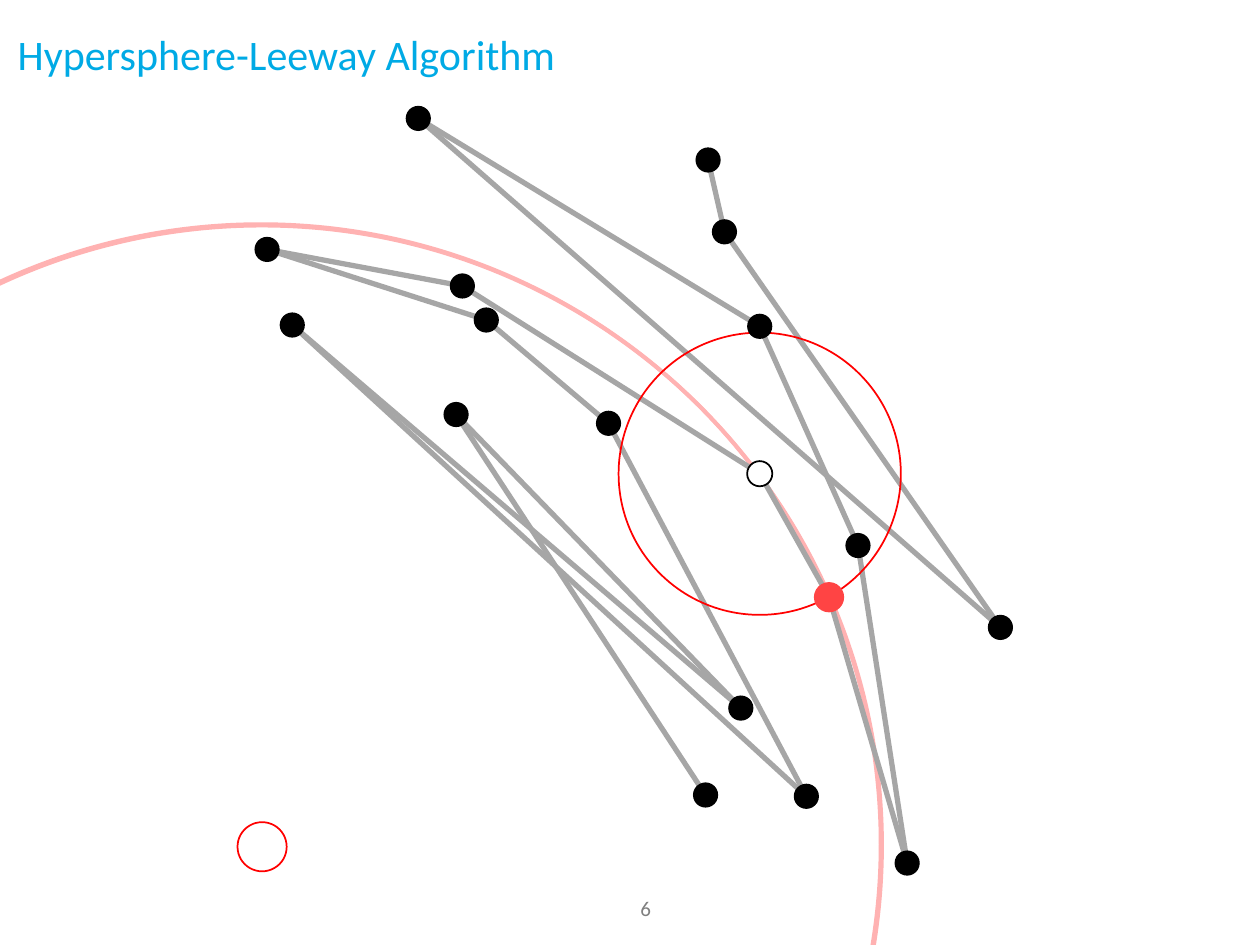
"""Build the Hypersphere-Leeway Algorithm slide: a search path with its distance rings."""
from dataclasses import dataclass
from itertools import pairwise
from typing import Optional

from lxml import etree
from pptx import Presentation
from pptx.dml.color import RGBColor
from pptx.enum.shapes import MSO_CONNECTOR, MSO_SHAPE
from pptx.enum.text import MSO_ANCHOR, MSO_AUTO_SIZE, PP_ALIGN
from pptx.oxml.ns import qn
from pptx.util import Inches, Pt

OVAL = MSO_SHAPE.OVAL
STRAIGHT = MSO_CONNECTOR.STRAIGHT
MIDDLE = MSO_ANCHOR.MIDDLE
NO_FIT = MSO_AUTO_SIZE.NONE
LEFT, CENTER = PP_ALIGN.LEFT, PP_ALIGN.CENTER

COLUMNS, ROWS = 100, 75
WIDTH, HEIGHT = Inches(10), Inches(7.5)
FONT = "Calibri"
COLORS = {
    "title": "00AAE5",
    "page": "808080",
    "path": "A6A6A6",
    "sphere": "FFB2B2",
    "ring": "FF0000",
    "node": "000000",
    "query": "FFFFFF",
    "leeway": "FF4444",
}


@dataclass(frozen=True)
class Point:
    """A grid position."""
    column: float
    row: float


@dataclass(frozen=True)
class Circle:
    """A circle in grid units, with optional fill and outline."""
    center: Point
    diameter: float
    fill: Optional[str] = None
    outline: Optional[str] = None
    weight: float = 1


NODE_SIZE = 2
QUERY = Point(60.3, 37.6)
LEEWAY = Point(65.8, 47.4)
PATH = [
    Point(56, 63.1), Point(36.2, 32.9), Point(58.8, 56.2), Point(23.2, 25.8),
    Point(64, 63.2), Point(48.3, 33.6), Point(38.6, 25.4), Point(21.2, 19.8),
    Point(36.7, 22.7), QUERY, LEEWAY, Point(72, 68.5), Point(68.1, 43.3),
    Point(60.3, 25.9), Point(33.2, 9.4), Point(79.4, 49.8), Point(57.5, 18.4),
    Point(56.2, 12.7),
]
SPHERES = [
    Circle(Point(offset + 20.7, offset + 67), 98.4, None, "sphere", 2.25)
    for offset in (0, 0.1)
]
ORIGIN_RING = Circle(Point(20.8, 67.2), 3.9, None, "ring")
QUERY_RING = Circle(QUERY, 22.4, None, "ring")
SPECIAL_NODES = {
    QUERY: Circle(QUERY, NODE_SIZE, "query", "node"),
    LEEWAY: Circle(LEEWAY, 2.4, "leeway"),
}


def x(column: float) -> int:
    """Return the horizontal length of a number of columns."""
    return round(WIDTH * column / COLUMNS)


def y(row: float) -> int:
    """Return the vertical length of a number of rows."""
    return round(HEIGHT * row / ROWS)


def color(name: str) -> RGBColor:
    """Return a named palette colour."""
    return RGBColor.from_string(COLORS[name])


def draw_circle(slide, circle: Circle) -> None:
    """Draw a circle around its centre."""
    radius = circle.diameter / 2
    shape = slide.shapes.add_shape(
        OVAL, x(circle.center.column - radius), y(circle.center.row - radius),
        x(circle.diameter), y(circle.diameter))
    shape.shadow.inherit = False
    if circle.fill:
        shape.fill.solid()
        shape.fill.fore_color.rgb = color(circle.fill)
    else:
        shape.fill.background()
    if circle.outline:
        shape.line.color.rgb = color(circle.outline)
        shape.line.width = Pt(circle.weight)
    else:
        shape.line.fill.background()


def draw_segment(slide, start: Point, end: Point) -> None:
    """Draw one step of the search path."""
    segment = slide.shapes.add_connector(
        STRAIGHT, x(start.column), y(start.row), x(end.column), y(end.row))
    segment.line.color.rgb = color("path")
    segment.line.width = Pt(3)
    etree.SubElement(segment._element.spPr, qn("a:effectLst"))


def write_text(frame, words: str, size: float, tint: str, align: PP_ALIGN) -> None:
    """Fill a text frame with one formatted line."""
    frame.text = words
    frame.word_wrap = True
    frame.auto_size = NO_FIT
    frame.vertical_anchor = MIDDLE
    frame.margin_top = frame.margin_bottom = 0
    line = frame.paragraphs[0]
    line.alignment = align
    font = line.runs[0].font
    font.name, font.size, font.color.rgb = FONT, Pt(size), color(tint)


def main() -> None:
    """Build and save the slide."""
    deck = Presentation()
    deck.slide_width, deck.slide_height = WIDTH, HEIGHT
    slide = deck.slides.add_slide(deck.slide_layouts.get_by_name("Title Only"))

    for sphere in SPHERES:
        draw_circle(slide, sphere)

    page = slide.shapes.add_textbox(x(39.6), y(71.3), x(23.3), y(1.6))
    write_text(page.text_frame, "6", 12, "page", CENTER)

    title = slide.shapes.title
    title.left, title.top, title.width, title.height = x(0.4), y(1.7), x(96.1), y(5.1)
    write_text(title.text_frame, "Hypersphere-Leeway Algorithm", 24, "title", LEFT)

    draw_circle(slide, ORIGIN_RING)
    for start, end in pairwise(PATH):
        draw_segment(slide, start, end)
    draw_circle(slide, QUERY_RING)
    for node in PATH:
        draw_circle(slide, SPECIAL_NODES.get(node, Circle(node, NODE_SIZE, "node")))

    deck.save("out.pptx")


if __name__ == "__main__":
    main()
